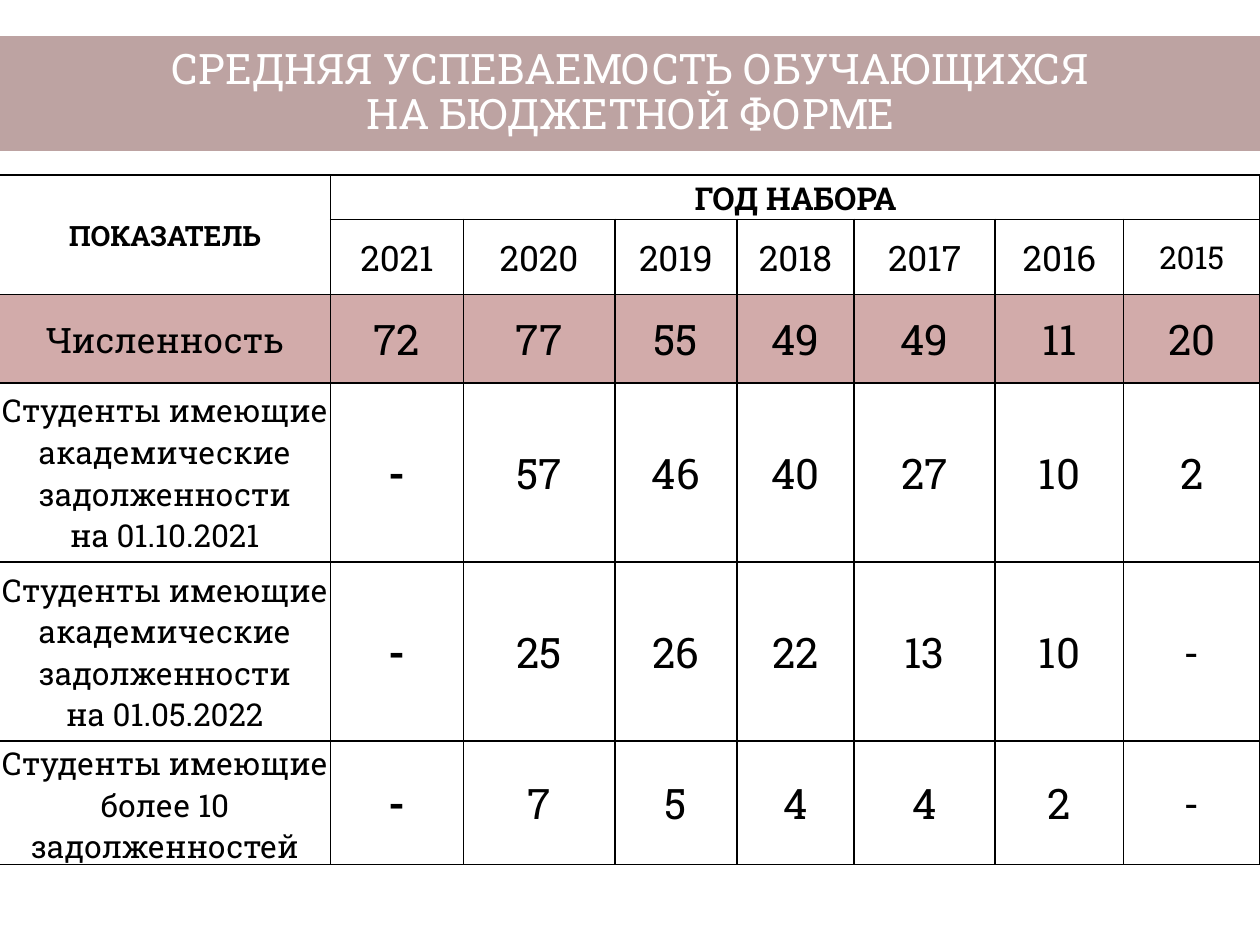
from dataclasses import dataclass

from lxml import etree
from pptx import Presentation
from pptx import util as u
from pptx.dml.color import RGBColor
from pptx.enum import text
from pptx.oxml.ns import qn


@dataclass(frozen=True)
class Theme:
    font: str = "Roboto Slab"
    banner: str = "632523"
    highlight: str = "953735"
    ink: str = "000000"
    paper: str = "FFFFFF"
    tint: int = 42  # opacity of the fills, percent
    title: int = 24
    value: int = 24
    year: int = 20
    label: int = 18
    corner: int = 16
    border: float = 1


THEME = Theme()

TITLE = "СРЕДНЯЯ УСПЕВАЕМОСТЬ ОБУЧАЮЩИХСЯ\nНА БЮДЖЕТНОЙ ФОРМЕ"
YEARS = ["2021", "2020", "2019", "2018", "2017", "2016", "2015"]
DEBTORS = "Студенты имеющие академические задолженности\nна "
INDICATORS = [
    ("Численность", ["72", "77", "55", "49", "49", "11", "20"]),
    (DEBTORS + "01.10.2021", ["-", "57", "46", "40", "27", "10", "2"]),
    (DEBTORS + "01.05.2022", ["-", "25", "26", "22", "13", "10", "-"]),
    ("Студенты имеющие более 10 задолженностей",
     ["-", "7", "5", "4", "4", "2", "-"]),
]
COLUMN_WIDTHS = [6.68, 2.67, 3.05, 2.46, 2.36, 2.84, 2.59, 2.74]
ROW_HEIGHTS = [0.89, 1.52, 1.78, 3.61, 3.61, 2.49]


def tint_fill(fill, color):
    """Fill with a colour at the theme's opacity."""
    fill.solid()
    fill.fore_color.rgb = RGBColor.from_string(color)
    srgb = fill._xPr.find(qn("a:solidFill")).find(qn("a:srgbClr"))
    etree.SubElement(srgb, qn("a:alpha"), val=str(THEME.tint * 1000))


def format_text(frame, size, color, bold=False, line_spacing=None):
    for paragraph in frame.paragraphs:
        paragraph.alignment = text.PP_ALIGN.CENTER
        if line_spacing:
            paragraph.line_spacing = line_spacing
        for run in paragraph.runs:
            run.font.name = THEME.font
            run.font.size = u.Pt(size)
            run.font.bold = bold
            run.font.color.rgb = RGBColor.from_string(color)


def add_borders(cell):
    properties = cell._tc.get_or_add_tcPr()
    for position, side in enumerate(("lnL", "lnR", "lnT", "lnB")):
        line = etree.Element(qn(f"a:{side}"), w=str(u.Pt(THEME.border)))
        solid = etree.SubElement(line, qn("a:solidFill"))
        etree.SubElement(solid, qn("a:srgbClr"), val=THEME.ink)
        properties.insert(position, line)


def fill_cell(cell, wording, size, bold=False):
    cell.text_frame.text = wording
    format_text(cell.text_frame, size, THEME.ink, bold)


def place_banner(title, left, top, width, height):
    title.left, title.top = u.Cm(left), u.Cm(top)
    title.width, title.height = u.Cm(width), u.Cm(height)
    tint_fill(title.fill, THEME.banner)
    frame = title.text_frame
    frame.text = TITLE
    frame.word_wrap = True
    frame.auto_size = text.MSO_AUTO_SIZE.SHAPE_TO_FIT_TEXT
    frame.vertical_anchor = text.MSO_ANCHOR.MIDDLE
    format_text(frame, THEME.title, THEME.paper, line_spacing=0.9)


def add_performance_table(slide, left, top, width, height):
    table = slide.shapes.add_table(
        len(ROW_HEIGHTS), len(COLUMN_WIDTHS),
        u.Cm(left), u.Cm(top), u.Cm(width), u.Cm(height)).table
    table.first_row = table.horz_banding = False
    for column, share in zip(table.columns, COLUMN_WIDTHS):
        column.width = u.Cm(width * share / sum(COLUMN_WIDTHS))
    for row, share in zip(table.rows, ROW_HEIGHTS):
        row.height = u.Cm(height * share / sum(ROW_HEIGHTS))

    for cell in table.iter_cells():
        cell.margin_left = cell.margin_right = cell.margin_top = u.Cm(0.03)
        cell.margin_bottom = 0
        cell.vertical_anchor = text.MSO_ANCHOR.MIDDLE
        cell.fill.background()
        add_borders(cell)

    table.cell(0, 0).merge(table.cell(1, 0))
    table.cell(0, 1).merge(table.cell(0, len(YEARS)))
    fill_cell(table.cell(0, 0), "ПОКАЗАТЕЛЬ", THEME.corner, bold=True)
    fill_cell(table.cell(0, 1), "ГОД НАБОРА", THEME.label, bold=True)
    for column, year in enumerate(YEARS, start=1):
        is_last = column == len(YEARS)
        fill_cell(table.cell(1, column), year,
                  THEME.label if is_last else THEME.year)

    for row, (indicator, values) in enumerate(INDICATORS, start=2):
        is_headcount = row == 2
        fill_cell(table.cell(row, 0), indicator,
                  THEME.year if is_headcount else THEME.label)
        for column, value in enumerate(values, start=1):
            fill_cell(table.cell(row, column), value, THEME.value,
                      bold=column == 1 and value == "-")
        if is_headcount:
            for cell in table.rows[row].cells:
                tint_fill(cell.fill, THEME.highlight)


def main():
    deck = Presentation()
    deck.slide_width, deck.slide_height = u.Cm(25.4), u.Cm(19.05)
    slide = deck.slides.add_slide(deck.slide_layouts[5])
    place_banner(slide.shapes.title, 0, 0.73, 25.42, 2.31)
    add_performance_table(slide, -0.02, 3.53, 25.42, 13.9)
    deck.save("out.pptx")


if __name__ == "__main__":
    main()
